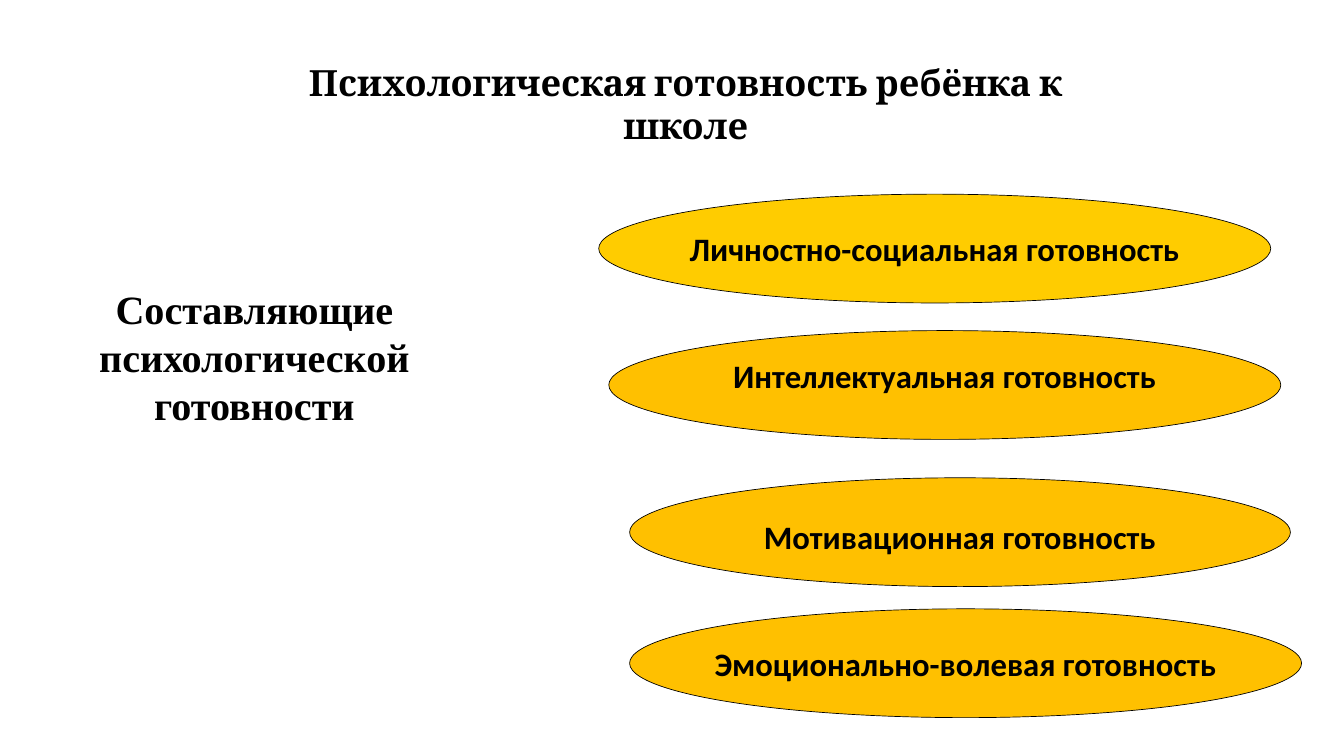
from pptx import Presentation
from pptx.dml.color import RGBColor
from pptx.enum.shapes import MSO_SHAPE as Shape
from pptx.enum.text import MSO_ANCHOR as Anchor, PP_ALIGN as Align
from pptx.util import Pt

BLACK = "000000"
TITLE = "Психологическая готовность ребёнка к школе"
CAPTION = "Составляющие психологической готовности"
ELLIPSE_HEIGHT = 116.6
INSET_X, INSET_Y = 13, 6.5

# text, left, top, width, fill, vertical text shift
COMPONENTS = [
    ("Личностно-социальная готовность", 641.5, 208, 720, "FFCC00", 0),
    ("Интеллектуальная готовность", 652.3, 354.2, 720, "FFC000", -10),
    ("Мотивационная готовность", 674.6, 511.9, 708, "FFC000", 4),
    ("Эмоционально-волевая готовность", 674.6, 652.3, 720, "FFC000", 0),
]


def color(value):
    return RGBColor.from_string(value)


def write(shape, text, font_name, size, anchor, wrap=True, shift=0):
    """Set centred bold text; shift moves middle-anchored text down."""
    frame = shape.text_frame
    frame.word_wrap = wrap
    frame.vertical_anchor = anchor
    frame.margin_left = frame.margin_right = Pt(INSET_X)
    frame.margin_top = Pt(INSET_Y + max(2 * shift, 0))
    frame.margin_bottom = Pt(INSET_Y + max(-2 * shift, 0))
    paragraph = frame.paragraphs[0]
    paragraph.alignment = Align.CENTER
    run = paragraph.add_run()
    run.text = text
    run.font.name = font_name
    run.font.size = Pt(size)
    run.font.bold = True
    run.font.color.rgb = color(BLACK)


def add_component(slide, text, left, top, width, fill, shift):
    ellipse = slide.shapes.add_shape(
        Shape.OVAL, Pt(left), Pt(top), Pt(width), Pt(ELLIPSE_HEIGHT))
    ellipse.shadow.inherit = False
    ellipse.fill.solid()
    ellipse.fill.fore_color.rgb = color(fill)
    ellipse.line.color.rgb = color(BLACK)
    ellipse.line.width = Pt(0.75)
    write(ellipse, text, "Calibri", 35, Anchor.MIDDLE, wrap=False, shift=shift)


def main():
    presentation = Presentation()
    presentation.slide_width = Pt(1440)
    presentation.slide_height = Pt(810)
    slide = presentation.slides.add_slide(presentation.slide_layouts[6])

    title = slide.shapes.add_textbox(Pt(281.5), Pt(56.2), Pt(906.5), Pt(109.4))
    write(title, TITLE, "Cambria", 38.7, Anchor.MIDDLE)

    for component in COMPONENTS:
        add_component(slide, *component)

    caption = slide.shapes.add_textbox(Pt(16.6), Pt(298.1), Pt(511.9), Pt(67))
    write(caption, CAPTION, "Times New Roman", 43, Anchor.TOP)

    presentation.save("out.pptx")


if __name__ == "__main__":
    main()
